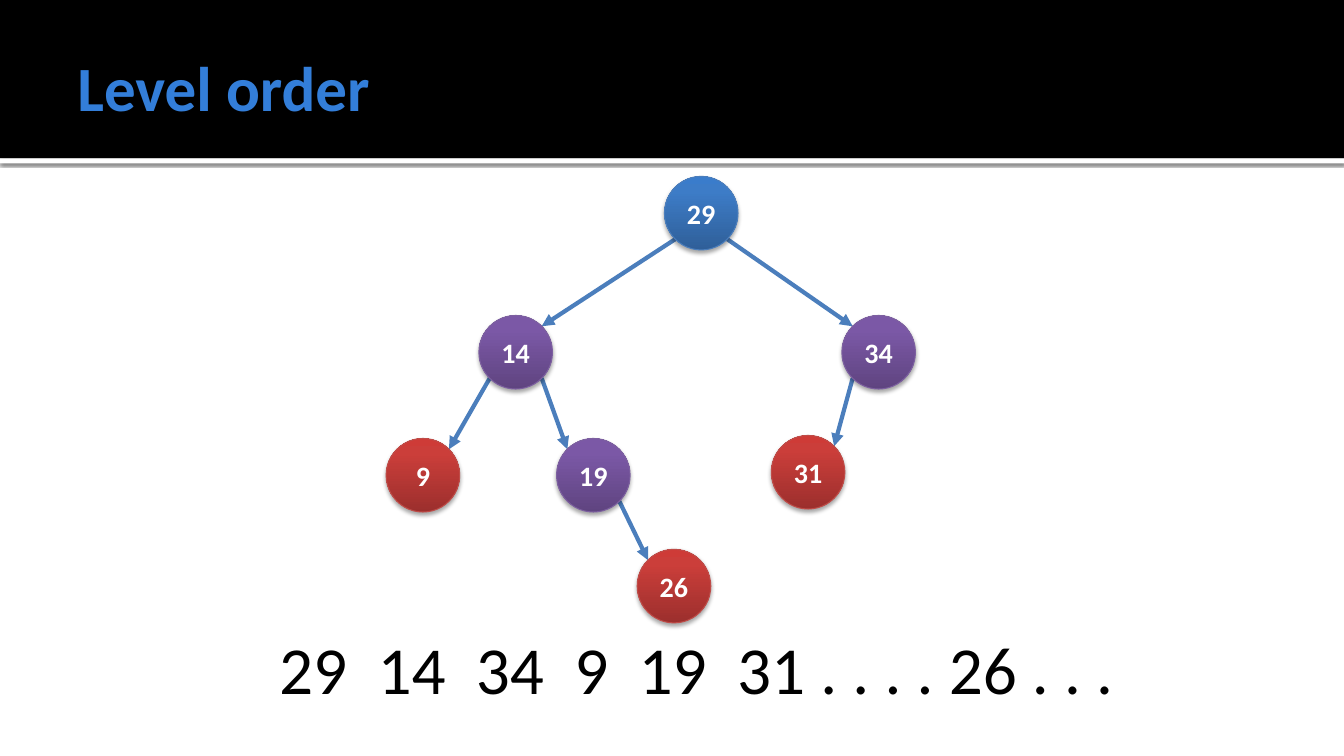
import copy
import math
from dataclasses import dataclass

import pptx
import pptx.dml.color
import pptx.enum.shapes
import pptx.enum.text
import pptx.oxml
import pptx.oxml.ns
import pptx.util

Inches = pptx.util.Inches
Pt = pptx.util.Pt
qn = pptx.oxml.ns.qn
Kind = pptx.enum.shapes.MSO_SHAPE
Anchor = pptx.enum.text.MSO_ANCHOR

SIZE = 0.73
REACH = SIZE / 2 * math.sqrt(0.5)
EDGE = "4B7EBC"


@dataclass
class Style:
    stops: tuple[str, str, str]
    line: str


@dataclass
class Node:
    label: str
    left: float
    top: float
    style: Style

    def point(self, right: bool, low: bool) -> tuple[float, float]:
        """Diagonal point on the rim of the circle."""
        x = self.left + SIZE / 2 + (REACH if right else -REACH)
        y = self.top + SIZE / 2 + (REACH if low else -REACH)
        return x, y


BLUE = Style(("2F5F99", "3D7CC7", "3A7CCB"), EDGE)
PURPLE = Style(("5F4480", "7B58A6", "7C57A8"), "7D60A0")
RED = Style(("9C2F2D", "CB3E3A", "CE3B37"), "BF4C48")

NODES = [
    Node("29", 6.59, 1.75, BLUE),
    Node("14", 4.75, 3.13, PURPLE),
    Node("34", 8.35, 3.13, PURPLE),
    Node("9", 3.83, 4.35, RED),
    Node("19", 5.52, 4.35, PURPLE),
    Node("31", 7.65, 4.32, RED),
    Node("26", 6.32, 5.45, RED),
]
LINKS = [("29", "14"), ("29", "34"), ("14", "9"), ("14", "19"),
         ("34", "31"), ("19", "26")]


def color(value: str) -> pptx.dml.color.RGBColor:
    return pptx.dml.color.RGBColor.from_string(value)


def add_shade(shape, alpha: int, blur: float, dist: float) -> None:
    """Black shadow falling straight down."""
    shape.shadow.inherit = False
    effect = shape._element.spPr.find(qn("a:effectLst"))
    effect.append(pptx.oxml.parse_xml(
        f'<a:outerShdw {pptx.oxml.ns.nsdecls("a")} blurRad="{Pt(blur)}" '
        f'dist="{Pt(dist)}" dir="5400000" rotWithShape="0">'
        f'<a:srgbClr val="000000"><a:alpha val="{alpha * 1000}"/></a:srgbClr>'
        '</a:outerShdw>'))


def add_bar(slide, top: float, height: float, fill: str):
    bar = slide.shapes.add_shape(
        Kind.RECTANGLE, 0, Inches(top), Inches(13.33), Inches(height))
    bar.fill.solid()
    bar.fill.fore_color.rgb = color(fill)
    bar.line.fill.background()
    bar.shadow.inherit = False
    return bar


def set_text(shape, text: str, size: float, tint: str, bold: bool) -> None:
    par = shape.text_frame.paragraphs[0]
    par.text = text
    par.font.name = "Calibri"
    par.font.size = Pt(size)
    par.font.bold = bold
    par.font.color.rgb = color(tint)


def add_text(slide, box: tuple[float, float, float, float], text: str,
             size: float, tint: str, bold: bool = False):
    shape = slide.shapes.add_textbox(*map(Inches, box))
    shape.text_frame.word_wrap = True
    set_text(shape, text, size, tint, bold)
    return shape


def add_link(slide, head: Node, child: Node) -> None:
    right = child.left > head.left
    ends = head.point(right, True) + child.point(not right, False)
    link = slide.shapes.add_connector(
        pptx.enum.shapes.MSO_CONNECTOR.STRAIGHT, *map(Inches, ends))
    link.line.color.rgb = color(EDGE)
    link.line.width = Pt(3)
    link.line._get_or_add_ln().append(pptx.oxml.parse_xml(
        f'<a:tailEnd {pptx.oxml.ns.nsdecls("a")} type="triangle"/>'))
    link._element.spPr.append(pptx.oxml.parse_xml(
        f'<a:effectLst {pptx.oxml.ns.nsdecls("a")}/>'))


def add_node(slide, node: Node) -> None:
    disc = slide.shapes.add_shape(
        Kind.OVAL, *map(Inches, (node.left, node.top, SIZE, SIZE)))
    # Gradient from dark at the foot to light at the top
    disc.fill.gradient()
    disc.fill.gradient_angle = 90
    stops = disc._element.spPr.find(".//" + qn("a:gsLst"))
    stops.append(copy.deepcopy(stops[-1]))
    for stop, tint, place in zip(
            disc.fill.gradient_stops, node.style.stops, (0, 0.8, 1)):
        stop.color.rgb = color(tint)
        stop.position = place
    disc.line.color.rgb = color(node.style.line)
    disc.line.width = Pt(0.75)
    add_shade(disc, 35, 3.1, 1.8)
    disc.text_frame.vertical_anchor = Anchor.MIDDLE
    set_text(disc, node.label, 20, "FFFFFF", True)
    disc.text_frame.paragraphs[0].alignment = pptx.enum.text.PP_ALIGN.CENTER


def main() -> None:
    deck = pptx.Presentation()
    deck.slide_width = Inches(13.33)
    deck.slide_height = Inches(7.5)
    slide = deck.slides.add_slide(deck.slide_layouts[6])

    # Header band and title
    add_shade(add_bar(slide, 1.57, 0.05, "FFFFFF"), 60, 2.5, 0.8)
    add_bar(slide, 0, 1.57, "000000")
    title = add_text(slide, (0.67, 0.17, 12, 1.37), "Level order",
                     45, "337ED9", True)
    title.text_frame.vertical_anchor = Anchor.MIDDLE
    title.text_frame.margin_right = Inches(0.05)

    # Visiting order
    add_text(slide, (2.67, 6.17, 8.58, 0.91),
             "29  14  34  9  19  31 . . . . 26 . . . .", 48, "000000")

    # Tree
    tree = {node.label: node for node in NODES}
    for head, child in LINKS:
        add_link(slide, tree[head], tree[child])
    for node in NODES:
        add_node(slide, node)

    deck.save("out.pptx")


if __name__ == "__main__":
    main()
